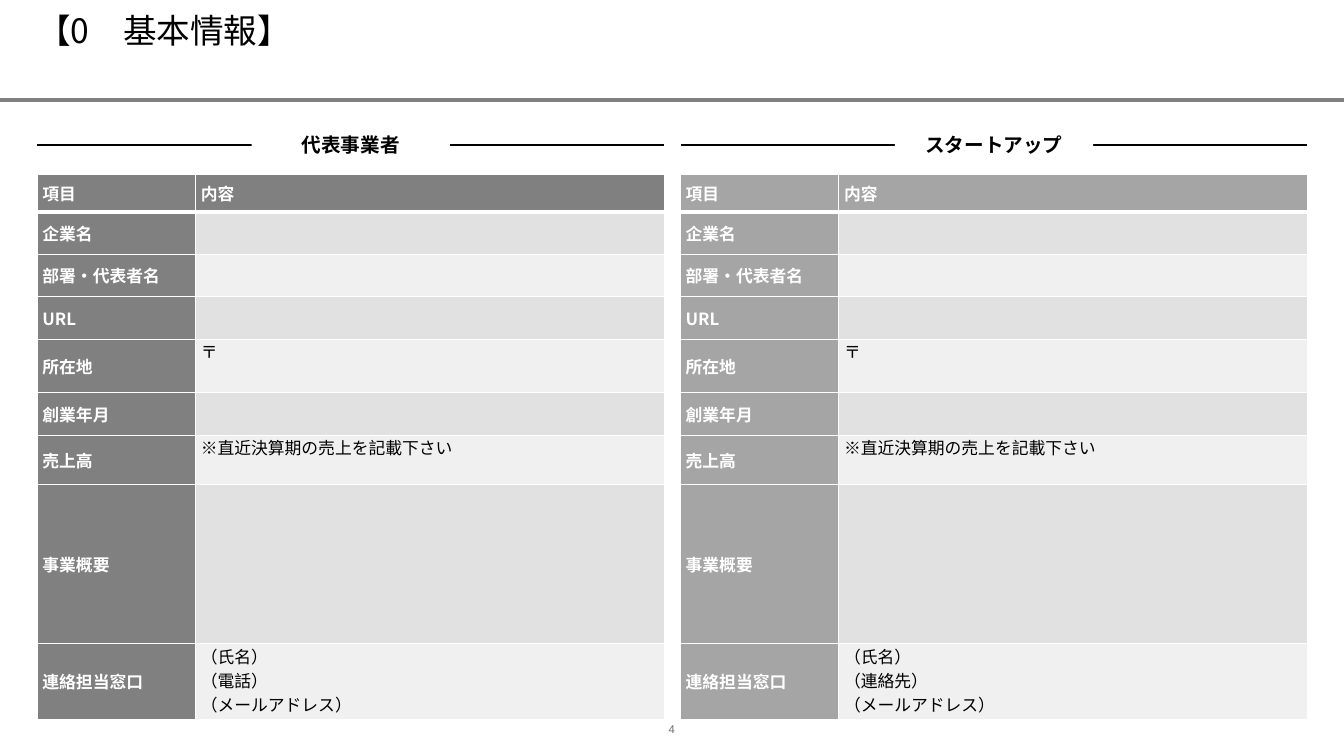
from dataclasses import dataclass

from lxml import etree
from pptx import Presentation
from pptx.dml.color import RGBColor
from pptx.enum.shapes import MSO_CONNECTOR, MSO_SHAPE
from pptx.enum.text import MSO_ANCHOR, PP_ALIGN
from pptx.oxml.ns import qn
from pptx.util import Cm, Pt

STRAIGHT, RECTANGLE = MSO_CONNECTOR.STRAIGHT, MSO_SHAPE.RECTANGLE
TOP, MIDDLE = MSO_ANCHOR.TOP, MSO_ANCHOR.MIDDLE
LEFT, CENTER = PP_ALIGN.LEFT, PP_ALIGN.CENTER

# Content
TITLE = "【0　基本情報】"
PAGE_NUMBER = "4"


def company_rows(contact_line):
    """Item, content and row height in cm."""
    return [
        ("項目", "内容", 0.94),
        ("企業名", "", 1.07),
        ("部署・代表者名", "", 1.07),
        ("URL", "", 1.07),
        ("所在地", "〒", 1.35),
        ("創業年月", "", 1.07),
        ("売上高", "※直近決算期の売上を記載下さい", 1.24),
        ("事業概要", "", 4.01),
        ("連絡担当窓口", f"（氏名）\n{contact_line}\n（メールアドレス）", 1.91),
    ]


@dataclass(frozen=True)
class Theme:
    font: str = "Noto Sans CJK JP"
    number_font: str = "Arial"
    black: str = "000000"
    white: str = "FFFFFF"
    rule: str = "808080"
    number: str = "6B6B6B"
    bands: tuple = ("F0F0F0", "E1E1E1")
    title_size: int = 24
    heading_size: int = 14
    cell_size: int = 12
    number_size: int = 8


THEME = Theme()
COMPANIES = [
    ("代表事業者", "808080", company_rows("（電話）")),
    ("スタートアップ", "A5A5A5", company_rows("（連絡先）")),
]

# Layout in cm
SLIDE_WIDTH, SLIDE_HEIGHT = 33.87, 19.05
MARGIN, COLUMN_PITCH = 0.94, 16.21
COLUMN_WIDTHS = (3.99, 11.81)
PANEL_WIDTH = sum(COLUMN_WIDTHS)
TITLE_RULE_Y, HEADING_Y, TABLE_TOP = 2.52, 3.65, 4.4
HEADING_WIDTH, HEADING_HEIGHT = 5, 0.6
CELL_INSET = 0.13


def color(value):
    return RGBColor.from_string(value)


def write(frame, text, size, ink, bold=False, align=LEFT, face=THEME.font):
    frame.text = text
    for paragraph in frame.paragraphs:
        paragraph.alignment = align
        font = paragraph.font
        font.size, font.bold, font.name = Pt(size), bold, face
        font.color.rgb = color(ink)
        properties = paragraph._p.pPr.find(qn("a:defRPr"))
        east_asian = etree.Element(qn("a:ea"), typeface=face)
        properties.find(qn("a:latin")).addnext(east_asian)


def set_insets(target, side, top=0):
    target.margin_left = target.margin_right = Cm(side)
    target.margin_top, target.margin_bottom = Cm(top), Cm(0)


def add_rule(slide, left, width, y, ink, weight):
    rule = slide.shapes.add_connector(
        STRAIGHT, Cm(left), Cm(y), Cm(left + width), Cm(y))
    rule.line.color.rgb, rule.line.width = color(ink), Pt(weight)
    etree.SubElement(rule._element.spPr, qn("a:effectLst"))


def set_borders(cell, top, bottom):
    properties = cell._tc.get_or_add_tcPr()
    edges = (("a:lnL", 1), ("a:lnR", 1), ("a:lnT", top), ("a:lnB", bottom))
    for position, (edge, weight) in enumerate(edges):
        border = etree.Element(qn(edge), w=str(Pt(weight)))
        fill = etree.SubElement(border, qn("a:solidFill"))
        etree.SubElement(fill, qn("a:srgbClr"), val=THEME.white)
        properties.insert(position, border)


def format_cell(cell, text, fill, ink, bold, anchor, row):
    write(cell.text_frame, text, THEME.cell_size, ink, bold)
    set_insets(cell, CELL_INSET)
    cell.vertical_anchor = anchor
    cell.fill.solid()
    cell.fill.fore_color.rgb = color(fill)
    set_borders(cell, top=3 if row == 1 else 1, bottom=3 if row == 0 else 1)


def add_heading(slide, left, text):
    add_rule(slide, left, PANEL_WIDTH, HEADING_Y, THEME.black, 1)
    heading = slide.shapes.add_shape(
        RECTANGLE, Cm(left + (PANEL_WIDTH - HEADING_WIDTH) / 2),
        Cm(HEADING_Y - HEADING_HEIGHT / 2), Cm(HEADING_WIDTH), Cm(HEADING_HEIGHT))
    heading.shadow.inherit = False
    heading.fill.solid()
    heading.fill.fore_color.rgb = color(THEME.white)
    heading.line.fill.background()
    frame = heading.text_frame
    set_insets(frame, 0)
    frame.vertical_anchor = MIDDLE
    write(frame, text, THEME.heading_size, THEME.black, True, CENTER)


def add_company_table(slide, left, accent, rows):
    height = sum(row_height for _, _, row_height in rows)
    table = slide.shapes.add_table(
        len(rows), len(COLUMN_WIDTHS), Cm(left), Cm(TABLE_TOP),
        Cm(PANEL_WIDTH), Cm(height)).table
    table.first_row = table.horz_banding = False
    for column, width in zip(table.columns, COLUMN_WIDTHS):
        column.width = Cm(width)
    for row, (item, content, row_height) in enumerate(rows):
        table.rows[row].height = Cm(row_height)
        format_cell(table.cell(row, 0), item, accent, THEME.white, True, MIDDLE, row)
        if row == 0:
            look = (accent, THEME.white, True, MIDDLE)
        else:
            look = (THEME.bands[row % 2], THEME.black, False, TOP)
        format_cell(table.cell(row, 1), content, *look, row)


def main():
    deck = Presentation()
    deck.slide_width, deck.slide_height = Cm(SLIDE_WIDTH), Cm(SLIDE_HEIGHT)
    slide = deck.slides.add_slide(deck.slide_layouts[5])

    # Title and its rule
    title = slide.shapes.title
    title.left, title.top, title.width, title.height = Cm(MARGIN), Cm(0), Cm(32), Cm(2.41)
    set_insets(title.text_frame, 0, top=0.25)
    title.text_frame.vertical_anchor = TOP
    write(title.text_frame, TITLE, THEME.title_size, THEME.black)
    add_rule(slide, 0, SLIDE_WIDTH, TITLE_RULE_Y, THEME.rule, 2.25)

    # One panel per company
    for index, (name, accent, rows) in enumerate(COMPANIES):
        left = MARGIN + index * COLUMN_PITCH
        add_heading(slide, left, name)
        add_company_table(slide, left, accent, rows)

    # Page number
    number = slide.shapes.add_textbox(Cm(16.51), Cm(18.24), Cm(0.84), Cm(0.25)).text_frame
    number.word_wrap = True
    number.vertical_anchor = MIDDLE
    set_insets(number, 0)
    write(number, PAGE_NUMBER, THEME.number_size, THEME.number,
          align=CENTER, face=THEME.number_font)

    deck.save("out.pptx")


if __name__ == "__main__":
    main()
